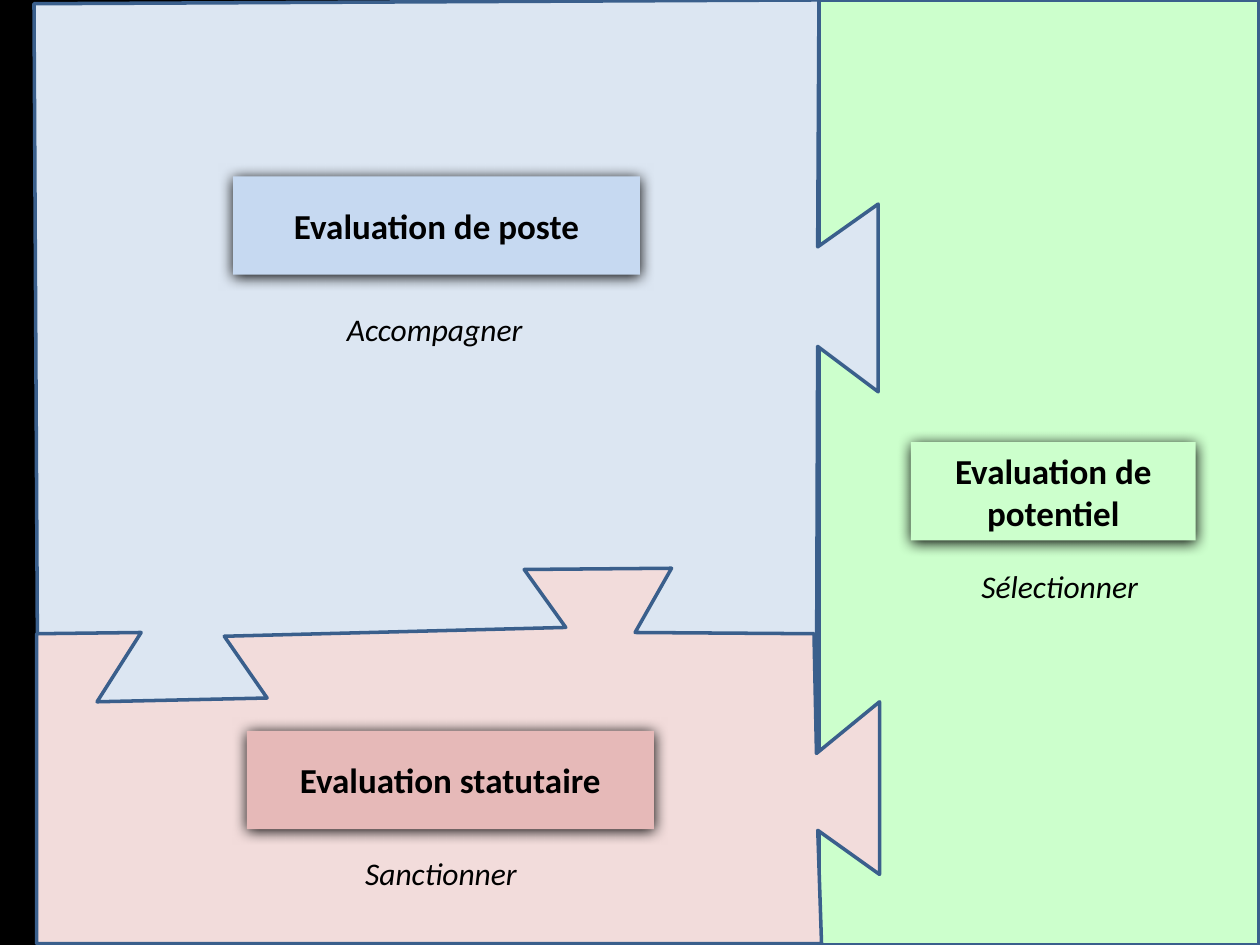
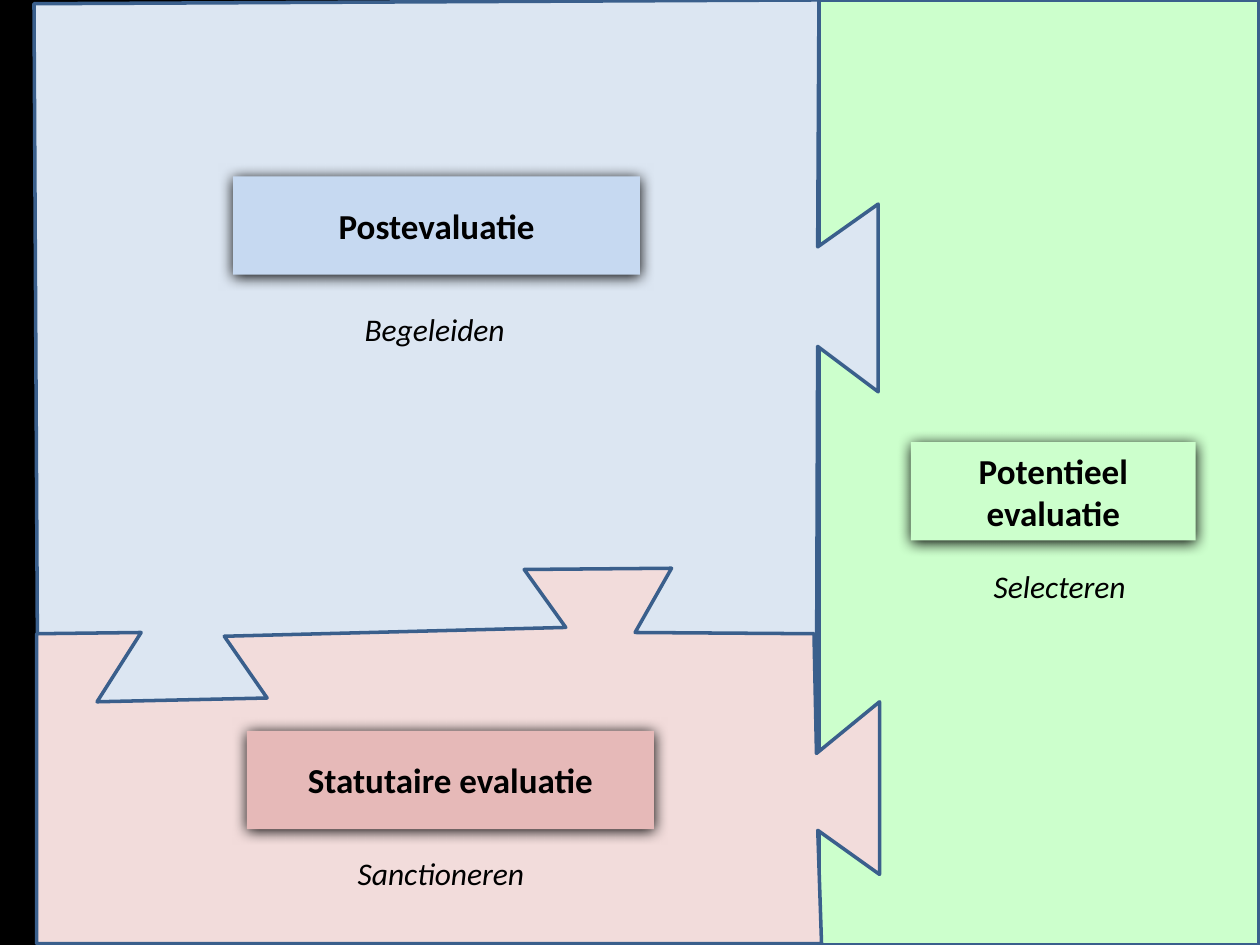
from lxml import etree
from pptx import Presentation
from pptx.dml.color import RGBColor
from pptx.enum.shapes import MSO_SHAPE
from pptx.enum.text import MSO_ANCHOR, PP_ALIGN
from pptx.oxml.ns import qn
from pptx.util import Inches, Pt

RECTANGLE = MSO_SHAPE.RECTANGLE
CENTER = PP_ALIGN.CENTER
MIDDLE = MSO_ANCHOR.MIDDLE

# Content: one (heading, purpose) pair per evaluation, one dict per language
EVALUATIONS = [
    {
        "potential": ("Evaluation de potentiel", "Sélectionner"),
        "post": ("Evaluation de poste", "Accompagner"),
        "status": ("Evaluation statutaire", "Sanctionner"),
    },
    {
        "potential": ("Potentieel\vevaluatie", "Selecteren"),
        "post": ("Postevaluatie", "Begeleiden"),
        "status": ("Statutaire evaluatie", "Sanctioneren"),
    },
]

# Layout in inches
WIDTH, HEIGHT = 10, 7.5
HEADING_HEIGHT = 0.78
PURPOSE_SIZE = (1.78, 0.4)
POTENTIAL_PANEL = (6.5, 0, 3.49, HEIGHT)

# Jigsaw outlines, clockwise from the top left corner
PIECES = {
    "post": [
        (0.27, 0.03), (6.5, 0),
        (6.49, 1.96), (6.97, 1.62), (6.97, 3.11), (6.49, 2.75),
        (6.48, 5.63), (0.3, 5.63),
    ],
    "status": [
        (0.29, 5.03),
        (1.12, 5.02), (0.77, 5.57), (2.12, 5.54), (1.78, 5.05),
        (4.49, 4.98), (4.16, 4.52), (5.33, 4.51), (5.04, 5.02),
        (6.46, 5.03),
        (6.48, 5.98), (6.98, 5.57), (6.98, 6.94), (6.49, 6.59),
        (6.52, 7.49), (0.29, 7.49),
    ],
}

# Heading: left, top, width; purpose: left, top
LABELS = {
    "potential": {"heading": (7.23, 3.51, 2.26), "purpose": (7.52, 4.45)},
    "post": {"heading": (1.85, 1.4, 3.23), "purpose": (2.56, 2.41)},
    "status": {"heading": (1.96, 5.8, 3.23), "purpose": (2.61, 6.73)},
}

THEME = {
    "backdrop": "000000",
    "outline": "3A5F8C",
    "line_width": 2,
    "piece": {"potential": "CCFFCC", "post": "DCE6F2", "status": "F2DCDB"},
    "heading_fill": {"potential": "CCFFCC", "post": "C6D9F1", "status": "E6B9B8"},
    "heading": {"name": "Calibri", "size": Pt(20), "bold": True},
    "purpose": {"name": "Calibri", "size": Pt(18), "italic": True},
    "text": "000000",
    "shadow": {"blurRad": Pt(8.5), "dist": Pt(1), "dir": 90 * 60000,
               "algn": "ctr", "rotWithShape": 0},
}


def paint(shape, fill, line=None):
    shape.shadow.inherit = False
    shape.fill.solid()
    shape.fill.fore_color.rgb = RGBColor.from_string(fill)
    if line:
        shape.line.color.rgb = RGBColor.from_string(line)
        shape.line.width = Pt(THEME["line_width"])
    else:
        shape.line.fill.background()


def add_panel(slide, box, fill, line=None):
    panel = slide.shapes.add_shape(RECTANGLE, *map(Inches, box))
    paint(panel, fill, line)
    return panel


def add_piece(slide, outline, fill):
    start, *others = [(Inches(x), Inches(y)) for x, y in outline]
    builder = slide.shapes.build_freeform(*start, scale=1.0)
    builder.add_line_segments(others, close=True)
    paint(builder.convert_to_shape(), fill, THEME["outline"])


def add_shadow(shape):
    effects = shape._element.spPr.find(qn("a:effectLst"))
    outer = etree.SubElement(effects, qn("a:outerShdw"))
    for key, value in THEME["shadow"].items():
        outer.set(key, str(value))
    etree.SubElement(outer, qn("a:srgbClr")).set("val", THEME["backdrop"])


def write(shape, text, style):
    frame = shape.text_frame
    frame.word_wrap = True
    frame.text = text
    paragraph = frame.paragraphs[0]
    paragraph.alignment = CENTER
    for run in paragraph.runs:
        for key, value in THEME[style].items():
            setattr(run.font, key, value)
        run.font.color.rgb = RGBColor.from_string(THEME["text"])


def add_label(slide, evaluation, heading, purpose):
    place = LABELS[evaluation]
    plate = add_panel(slide, (*place["heading"], HEADING_HEIGHT),
                      THEME["heading_fill"][evaluation])
    add_shadow(plate)
    plate.text_frame.vertical_anchor = MIDDLE
    write(plate, heading, "heading")

    caption = slide.shapes.add_textbox(
        *map(Inches, (*place["purpose"], *PURPOSE_SIZE)))
    write(caption, purpose, "purpose")


def build_slide(deck, evaluations):
    slide = deck.slides.add_slide(deck.slide_layouts[6])
    # Backdrop and puzzle
    add_panel(slide, (0, 0, WIDTH, HEIGHT), THEME["backdrop"], THEME["backdrop"])
    add_panel(slide, POTENTIAL_PANEL, THEME["piece"]["potential"], THEME["outline"])
    for evaluation, outline in PIECES.items():
        add_piece(slide, outline, THEME["piece"][evaluation])
    # Headings and purposes
    for evaluation, (heading, purpose) in evaluations.items():
        add_label(slide, evaluation, heading, purpose)


def main():
    deck = Presentation()
    deck.slide_width, deck.slide_height = Inches(WIDTH), Inches(HEIGHT)
    for evaluations in EVALUATIONS:
        build_slide(deck, evaluations)
    deck.save("out.pptx")


if __name__ == "__main__":
    main()
